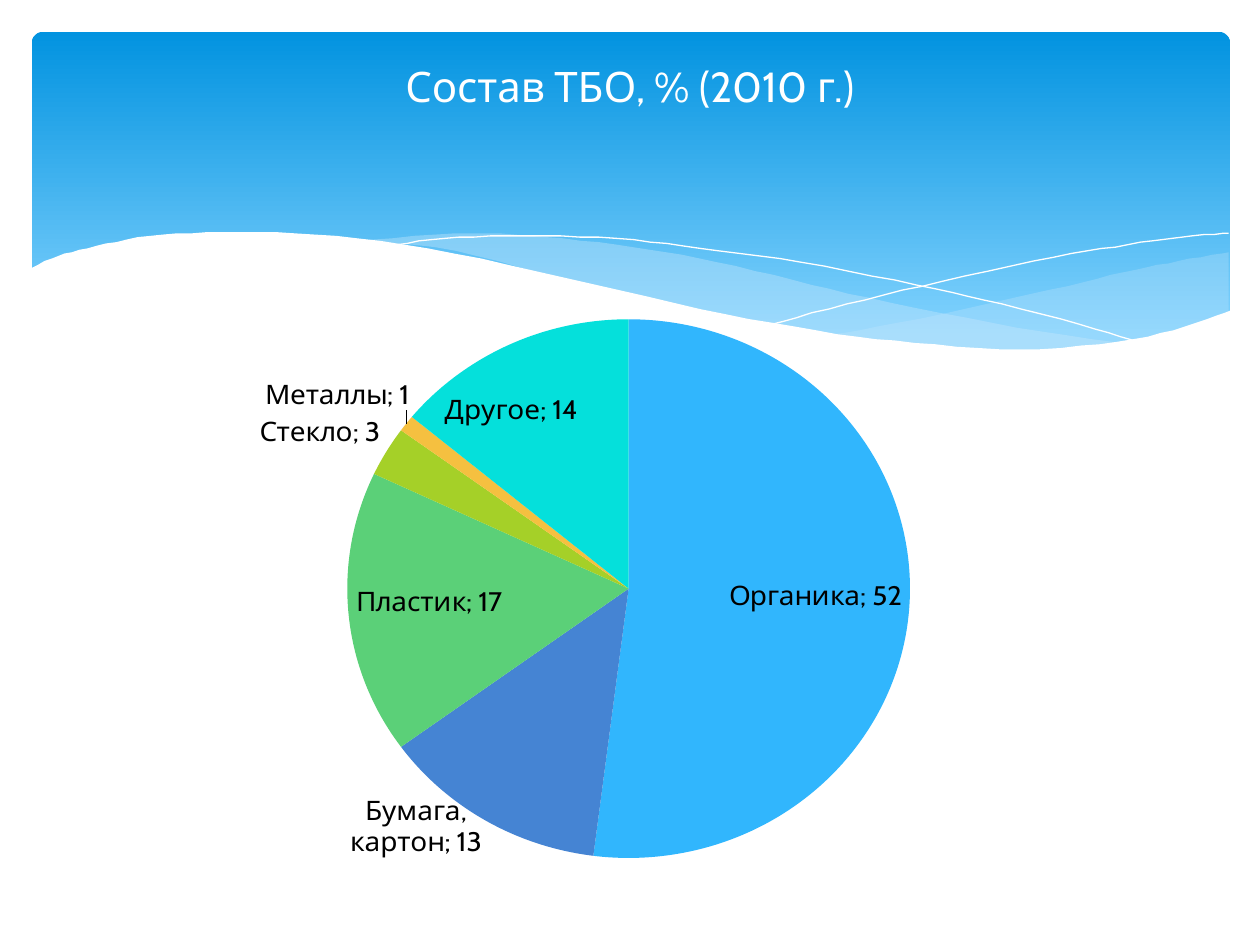
from lxml import etree
from pptx import Presentation
from pptx.chart.data import CategoryChartData
from pptx.dml.color import RGBColor
from pptx.enum.chart import XL_CHART_TYPE, XL_LABEL_POSITION
from pptx.enum.shapes import MSO_SHAPE
from pptx.enum.text import MSO_ANCHOR, PP_ALIGN
from pptx.oxml import parse_xml
from pptx.oxml.ns import nsdecls, qn
from pptx.util import Cm, Pt

FONT = "Cabin"
WAVE_UNIT = Cm(2.54) / 100  # wave knots are in hundredths of an inch

RIGHT_WAVE = (
    [(950, 175), (910, 182), (866, 191), (807, 205), (704, 228), (636, 240)],
    [(636, 240), (707, 249), (767, 252), (819, 252), (872, 247), (917, 234), (950, 222)],
)
LEFT_WAVE = (
    [(868, 248), (782, 235), (681, 215), (604, 197), (530, 180), (464, 169),
     (395, 162), (336, 160), (261, 166)],
    [(261, 166), (337, 174), (424, 197), (541, 223), (625, 239), (711, 250),
     (793, 253), (868, 248)],
)
FALLING_LINE = [(284, 170), (328, 164), (391, 162), (464, 164), (531, 172), (611, 183),
                (702, 201), (770, 216), (844, 236), (882, 247)]
RISING_LINE = [(588, 232), (647, 216), (723, 198), (811, 179), (870, 169), (913, 163),
               (950, 160)]
FRONT_WAVE = (
    [(952, 221), (915, 234), (862, 246), (784, 252), (701, 247), (623, 237), (530, 220),
     (422, 195), (315, 172), (225, 161), (152, 159), (94, 162), (51, 170), (21, 178),
     (-2, 188)],
    [(-2, 304), (952, 304)],
)

WASTE = [
    ("Органика", 52, "31B6FD"),
    ("Бумага, картон", 13, "4584D3"),
    ("Пластик", 17, "5BD078"),
    ("Стекло", 3, "A5D028"),
    ("Металлы", 1, "F5C040"),
    ("Другое", 14, "05E0DB"),
]


def color(hex_value):
    return RGBColor.from_string(hex_value)


def smooth(knots, steps=5):
    """Return points of a Catmull-Rom curve through the knots."""
    if len(knots) < 3:
        return knots
    padded = [knots[0], *knots, knots[-1]]
    points = [knots[0]]
    for a, b, c, d in zip(padded, padded[1:], padded[2:], padded[3:]):
        for step in range(1, steps + 1):
            t = step / steps
            points.append(tuple(
                (2 * q + (r - p) * t + (2 * p - 5 * q + 4 * r - s) * t ** 2
                 + (3 * q - p - 3 * r + s) * t ** 3) / 2
                for p, q, r, s in zip(a, b, c, d)))
    return points


def add_curve(slide, left, top, edges, closed):
    points = [point for edge in edges for point in smooth(edge)]
    builder = slide.shapes.build_freeform(*points[0], scale=WAVE_UNIT)
    builder.add_line_segments(points[1:], close=closed)
    curve = builder.convert_to_shape(left, top)
    curve.shadow.inherit = False
    return curve


def add_wave(slide, left, top, edges, fill, opacity=100):
    wave = add_curve(slide, left, top, edges, closed=True)
    wave.fill.solid()
    wave.fill.fore_color.rgb = color(fill)
    wave.line.fill.background()
    if opacity < 100:
        rgb = wave.fill._xPr.find(qn("a:solidFill"))[0]
        etree.SubElement(rgb, qn("a:alpha")).set("val", str(opacity * 1000))


def add_hairline(slide, left, top, knots):
    hairline = add_curve(slide, left, top, [knots], closed=False)
    hairline.fill.background()
    hairline.line.color.rgb = color("FFFFFF")
    hairline.line.width = Pt(0)


def add_banner(slide, left, top, width, height):
    banner = slide.shapes.add_shape(MSO_SHAPE.ROUNDED_RECTANGLE, left, top, width, height)
    banner.adjustments[0] = 0.034
    banner.shadow.inherit = False
    banner.line.fill.background()
    banner.fill.gradient()
    banner.fill.gradient_angle = 270
    stops = [("0293E0", 0), ("83D3FE", 0.9)]
    for stop, (shade, position) in zip(banner.fill.gradient_stops, stops):
        stop.color.rgb = color(shade)
        stop.position = position

    add_wave(slide, left, top, RIGHT_WAVE, "C6E7FC", 29)
    add_wave(slide, left, top, LEFT_WAVE, "C6E7FC", 40)
    add_hairline(slide, left, top, FALLING_LINE)
    add_hairline(slide, left, top, RISING_LINE)
    add_wave(slide, left, top, FRONT_WAVE, "FFFFFF")


def add_title(slide, left, top, width, height):
    frame = slide.shapes.add_textbox(left, top, width, height).text_frame
    frame.word_wrap = True
    frame.vertical_anchor = MSO_ANCHOR.MIDDLE
    heading = frame.paragraphs[0]
    heading.text = "Состав ТБО, % (2010 г.)"
    heading.alignment = PP_ALIGN.CENTER
    font = heading.runs[0].font
    font.name, font.size, font.color.rgb = FONT, Pt(24), color("FFFFFF")


def set_plot_layout(chart, x, y, w, h):
    """Fix the inner plot area as fractions of the chart."""
    plot_area = chart._chartSpace.chart.plotArea
    for old in plot_area.findall(qn("c:layout")):
        plot_area.remove(old)
    places = "".join(f'<c:{tag} val="{value}"/>' for tag, value in [
        ("layoutTarget", "inner"), ("xMode", "edge"), ("yMode", "edge"),
        ("x", x), ("y", y), ("w", w), ("h", h)])
    plot_area.insert(0, parse_xml(
        f'<c:layout {nsdecls("c")}><c:manualLayout>{places}</c:manualLayout></c:layout>'))


def add_waste_pie(slide, left, top, width, height):
    waste = CategoryChartData()
    waste.categories = [name for name, _, _ in WASTE]
    waste.add_series("Series 1", [share for _, share, _ in WASTE])
    chart = slide.shapes.add_chart(
        XL_CHART_TYPE.PIE, left, top, width, height, waste).chart
    chart.has_legend = False
    chart.has_title = False
    chart.font.name, chart.font.size = FONT, Pt(10)
    chart.font.color.rgb = color("000000")
    set_plot_layout(chart, 0.245, 0.234, 0.608, 0.766)

    pie = chart.plots[0]
    pie.vary_by_categories = True
    shares = pie.series[0]
    for index, (_, _, shade) in enumerate(WASTE):
        slice_fill = shares.points[index].format.fill
        slice_fill.solid()
        slice_fill.fore_color.rgb = color(shade)

    labels = shares.data_labels
    labels.show_category_name = True
    labels.show_value = True
    labels.position = XL_LABEL_POSITION.BEST_FIT
    labels.font.name, labels.font.size = FONT, Pt(16)
    labels.font.color.rgb = color("000000")
    separator = parse_xml(f'<c:separator {nsdecls("c")}>; </c:separator>')
    labels._element.find(qn("c:showBubbleSize")).addnext(separator)


def main():
    presentation = Presentation()
    presentation.slide_width, presentation.slide_height = Cm(25.4), Cm(19.05)
    slide = presentation.slides.add_slide(presentation.slide_layouts[6])
    add_banner(slide, Cm(0.64), Cm(0.64), Cm(24.16), Cm(6.86))
    add_title(slide, Cm(1.27), Cm(0.94), Cm(22.86), Cm(1.57))
    add_waste_pie(slide, Cm(1.7), Cm(3.12), Cm(19.99), Cm(14.81))
    presentation.save("out.pptx")


if __name__ == "__main__":
    main()
